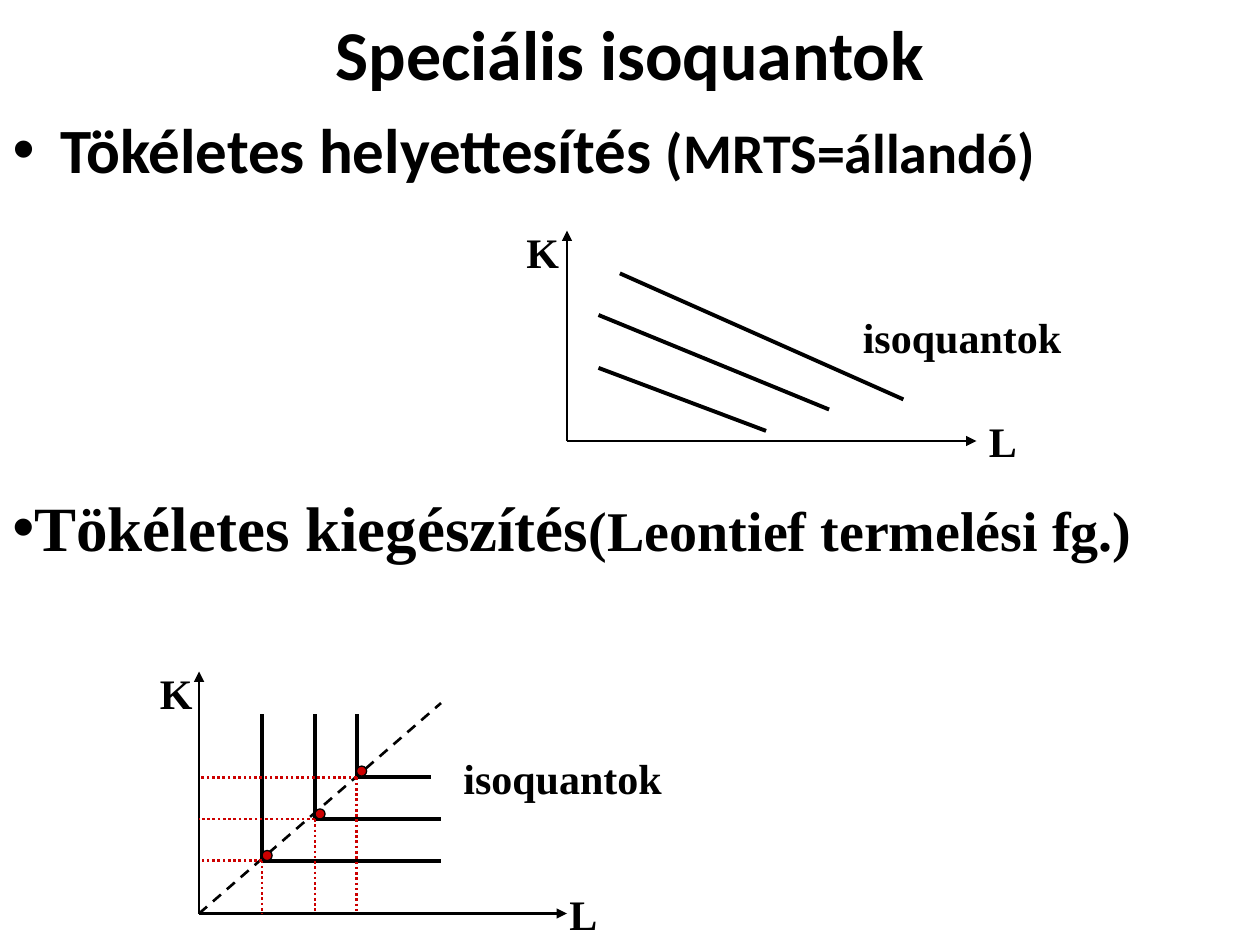
"""Build the slide on special isoquants with its two diagrams."""
from dataclasses import dataclass
from typing import Optional

from lxml.etree import SubElement
from pptx import Presentation
from pptx.dml.color import RGBColor
from pptx.enum.dml import MSO_LINE_DASH_STYLE as Dash
from pptx.enum.shapes import MSO_CONNECTOR as Connector, MSO_SHAPE as Shape
from pptx.enum.text import MSO_ANCHOR as Anchor, MSO_AUTO_SIZE as AutoSize, PP_ALIGN as Align
from pptx.oxml.ns import qn
from pptx.slide import Slide
from pptx.text.text import TextFrame, _Paragraph as Paragraph, _Run as Run
from pptx.util import Inches, Pt


@dataclass(frozen=True)
class Theme:
    """Colours, fonts and sizes of the slide."""
    ink: RGBColor = RGBColor(0, 0, 0)
    accent: RGBColor = RGBColor(0xCC, 0, 0)
    sans: str = "Calibri"
    serif: str = "Times New Roman"
    title: int = 40
    heading: int = 36
    remark: int = 32
    label: int = 24
    thin: float = 1.5
    thick: float = 2.25
    outline: float = 0.75


THEME = Theme()
DOT_SIZE = 0.08


@dataclass(frozen=True)
class Stroke:
    """Look of a line."""
    width: float = THEME.thick
    color: RGBColor = THEME.ink
    dash: Optional[Dash] = None
    arrow: bool = False


CURVE = Stroke()
AXIS = Stroke(THEME.thin, arrow=True)
RAY = Stroke(THEME.thin, dash=Dash.DASH)
GUIDE = Stroke(THEME.thin, THEME.accent, Dash.ROUND_DOT)


@dataclass(frozen=True)
class Segment:
    """Straight line between two points, in inches."""
    x1: float
    y1: float
    x2: float
    y2: float


@dataclass(frozen=True)
class Label:
    """Diagram caption with its box, in inches."""
    wording: str
    left: float
    top: float
    width: float = 0.5


@dataclass(frozen=True)
class Corner:
    """Kink of an L-shaped isoquant, its right end and its dot."""
    x: float
    y: float
    right: float
    dot_x: float
    dot_y: float


SUBSTITUTE_CURVES = (
    Segment(4.75, 2.5, 6.58, 3.25),
    Segment(4.92, 2.17, 7.17, 3.17),
    Segment(4.75, 2.92, 6.08, 3.42),
)
COMPLEMENT_CORNERS = (
    Corner(2.08, 6.83, 3.5, 2.08, 6.75),
    Corner(2.5, 6.5, 3.5, 2.5, 6.42),
    Corner(2.83, 6.17, 3.42, 2.83, 6.08),
)
LABELS = (
    Label("K", 4.08, 1.75), Label("L", 7.75, 3.25), Label("isoquantok", 6.75, 2.42, 1.83),
    Label("K", 1.17, 5.25), Label("L", 4.42, 7, 0.58), Label("isoquantok", 3.58, 5.92, 1.83),
)


def style_run(run: Run, font_name: str, size: int) -> None:
    """Apply the bold black lettering to a run."""
    run.font.name = font_name
    run.font.size = Pt(size)
    run.font.bold = True
    run.font.color.rgb = THEME.ink


def add_bullet(paragraph: Paragraph, hanging: float) -> None:
    """Give a paragraph a round bullet with a hanging indent."""
    properties = paragraph._p.get_or_add_pPr()
    properties.set("marL", str(Inches(hanging)))
    properties.set("indent", str(-Inches(hanging)))
    SubElement(properties, qn("a:buFont"), typeface="Arial")
    SubElement(properties, qn("a:buChar"), char="•")


def write_heading(frame: TextFrame, topic: str, remark: str, font_name: str, hanging: float) -> None:
    """Write a bulleted topic followed by a smaller remark."""
    frame.word_wrap = True
    frame.auto_size = AutoSize.NONE
    paragraph = frame.paragraphs[0]
    paragraph.space_before = Pt(0)
    add_bullet(paragraph, hanging)
    for wording, size in ((topic, THEME.heading), (remark, THEME.remark)):
        run = paragraph.add_run()
        run.text = wording
        style_run(run, font_name, size)


def draw_line(slide: Slide, segment: Segment, stroke: Stroke) -> None:
    """Draw one straight line."""
    ends = (Inches(v) for v in (segment.x1, segment.y1, segment.x2, segment.y2))
    connector = slide.shapes.add_connector(Connector.STRAIGHT, *ends)
    connector.line.color.rgb = stroke.color
    connector.line.width = Pt(stroke.width)
    if stroke.dash is not None:
        connector.line.dash_style = stroke.dash
    if stroke.arrow:
        SubElement(connector.line._get_or_add_ln(), qn("a:tailEnd"), type="triangle")
    SubElement(connector._element.spPr, qn("a:effectLst"))


def draw_axes(slide: Slide, x: float, y: float, top: float, right: float) -> None:
    """Draw the K and L axes from their origin."""
    draw_line(slide, Segment(x, y, x, top), AXIS)
    draw_line(slide, Segment(x, y, right, y), AXIS)


def draw_dot(slide: Slide, corner: Corner) -> None:
    """Mark the kink of an isoquant."""
    dot = slide.shapes.add_shape(Shape.OVAL, Inches(corner.dot_x), Inches(corner.dot_y),
                                 Inches(DOT_SIZE), Inches(DOT_SIZE))
    dot.shadow.inherit = False
    dot.fill.solid()
    dot.fill.fore_color.rgb = THEME.accent
    dot.line.color.rgb = THEME.ink
    dot.line.width = Pt(THEME.outline)


def draw_label(slide: Slide, label: Label) -> None:
    """Write one diagram caption."""
    box = slide.shapes.add_textbox(Inches(label.left), Inches(label.top),
                                   Inches(label.width), Inches(0.5))
    frame = box.text_frame
    frame.word_wrap = True
    frame.text = label.wording
    style_run(frame.paragraphs[0].runs[0], THEME.serif, THEME.label)


def draw_complements(slide: Slide) -> None:
    """Draw the L-shaped isoquants with their ray, guides and dots."""
    origin_x, origin_y, curve_top = 1.58, 7.25, 5.67
    draw_axes(slide, origin_x, origin_y, 5.33, 4.5)
    for corner in COMPLEMENT_CORNERS:
        draw_line(slide, Segment(corner.x, curve_top, corner.x, corner.y), CURVE)
        draw_line(slide, Segment(corner.x, corner.y, corner.right, corner.y), CURVE)
    draw_line(slide, Segment(origin_x, origin_y, 3.5, 5.58), RAY)
    for corner in COMPLEMENT_CORNERS:
        draw_dot(slide, corner)
        draw_line(slide, Segment(corner.x, corner.y, origin_x, corner.y), GUIDE)
        draw_line(slide, Segment(corner.x, corner.y, corner.x, origin_y), GUIDE)


def main() -> None:
    """Assemble and save the slide."""
    deck = Presentation()
    deck.slide_width, deck.slide_height = Inches(10), Inches(7.5)
    slide = deck.slides.add_slide(deck.slide_layouts[1])

    title, body = slide.placeholders
    title.left, title.top, title.width, title.height = map(Inches, (0.75, 0, 8.5, 0.83))
    title.text_frame.text = "Speciális isoquantok"
    title.text_frame.vertical_anchor = Anchor.MIDDLE
    title.text_frame.auto_size = AutoSize.NONE
    title.text_frame.paragraphs[0].alignment = Align.CENTER
    style_run(title.text_frame.paragraphs[0].runs[0], THEME.sans, THEME.title)

    body.left, body.top, body.width, body.height = map(Inches, (0, 0.83, 10, 1.25))
    write_heading(body.text_frame, "Tökéletes helyettesítés ", "(MRTS=állandó)", THEME.sans, 0.38)

    draw_axes(slide, 4.5, 3.5, 1.83, 7.75)
    for segment in SUBSTITUTE_CURVES:
        draw_line(slide, segment, CURVE)
    draw_complements(slide)
    for label in LABELS:
        draw_label(slide, label)

    complement_box = slide.shapes.add_textbox(*map(Inches, (0, 3.83, 10, 0.71)))
    write_heading(complement_box.text_frame, "Tökéletes kiegészítés", "(Leontief termelési fg.)",
                  THEME.serif, 0)
    deck.save("out.pptx")


if __name__ == "__main__":
    main()
